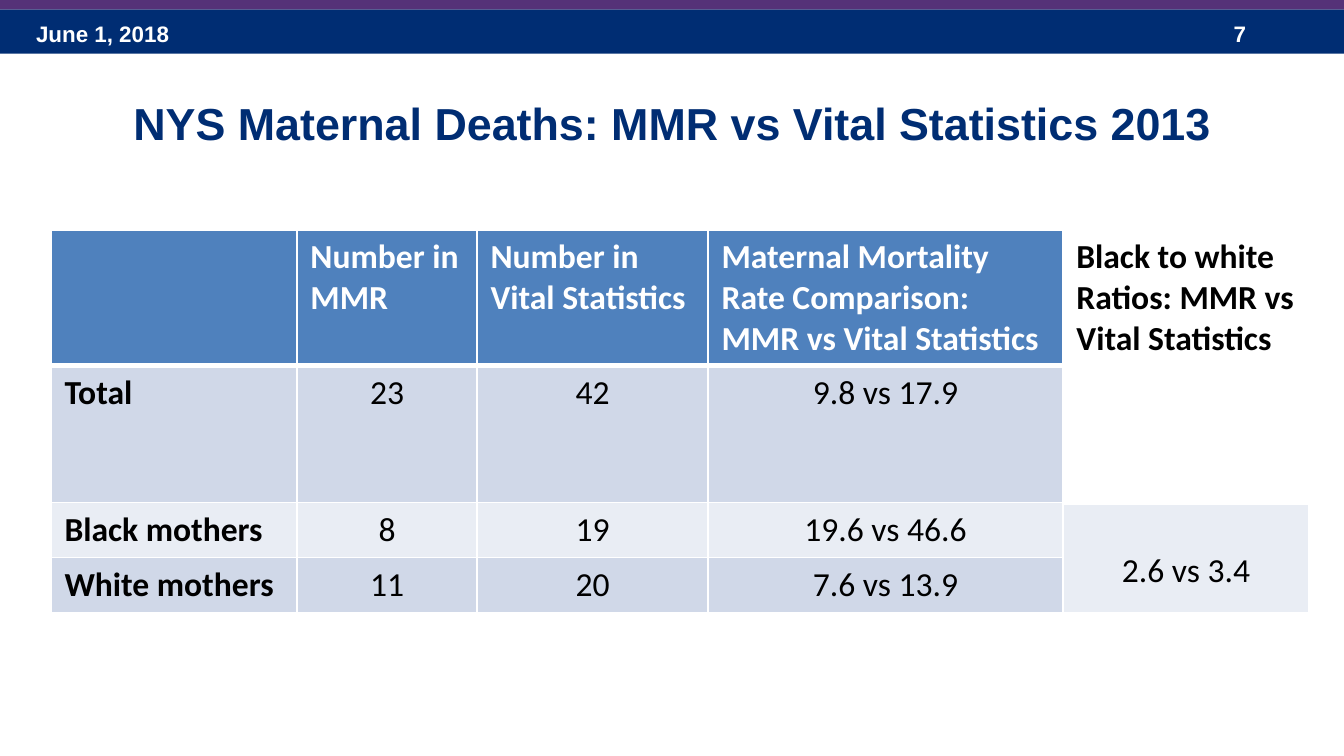
"""Build a slide that compares maternal deaths by source."""
from lxml.etree import SubElement
from pptx import Presentation
from pptx.dml.color import RGBColor
from pptx.enum.shapes import MSO_SHAPE as Shape
from pptx.enum.text import MSO_ANCHOR as Anchor, PP_ALIGN as Align
from pptx.oxml.ns import qn
from pptx.util import Inches, Pt

NAVY = RGBColor(0x00, 0x2D, 0x73)
PURPLE = RGBColor(0x55, 0x32, 0x78)
WHITE = RGBColor(0xFF, 0xFF, 0xFF)
BLACK = RGBColor(0x00, 0x00, 0x00)
BLUE = RGBColor(0x4F, 0x81, 0xBD)
MID = RGBColor(0xD0, 0xD8, 0xE8)
PALE = RGBColor(0xE9, 0xED, 0xF4)

COLS = [1.83, 1.34, 1.72, 2.64, 1.83]
ROWS = [1.01, 1.02, 0.41, 0.41]
FILLS = [BLUE, MID, PALE, MID]
DATA = [
    ["", "Number in MMR", "Number in Vital Statistics",
     "Maternal Mortality Rate Comparison: MMR vs Vital Statistics",
     "Black to white Ratios: MMR vs Vital Statistics"],
    ["Total", "23", "42", "9.8 vs 17.9", ""],
    ["Black mothers", "8", "19", "19.6 vs 46.6", "2.6 vs 3.4"],
    ["White mothers", "11", "20", "7.6 vs 13.9", ""],
]


def put(frame, text, size=18, face="Calibri", color=BLACK, bold=False,
        align=Align.LEFT, lead=None):
    """Write one formatted paragraph into a text frame."""
    frame.word_wrap = True
    para = frame.paragraphs[0]
    para.alignment = align
    para.line_spacing = lead
    run = para.add_run()
    run.text = text
    font = run.font
    font.size, font.name, font.bold = Pt(size), face, bold
    font.color.rgb = color


def add_bar(slide, top, height, color):
    """Add a full-width bar."""
    bar = slide.shapes.add_shape(Shape.RECTANGLE, 0, Inches(top),
                                 Inches(10), Inches(height))
    bar.shadow.inherit = False
    bar.fill.solid()
    bar.fill.fore_color.rgb = color
    bar.line.fill.background()


def add_label(slide, text, left, width):
    """Add a label on the top bar."""
    box = slide.shapes.add_textbox(Inches(left), Inches(0.1),
                                   Inches(width), Inches(0.3))
    put(box.text_frame, text, size=12, face="Arial", color=WHITE, bold=True)


def add_title(slide, text):
    """Place and fill the title."""
    title = slide.shapes.title
    title.left, title.top = Inches(-0.1), Inches(0.44)
    title.width, title.height = Inches(10.2), Inches(0.94)
    title.text_frame.vertical_anchor = Anchor.MIDDLE
    put(title.text_frame, text, size=24, face="Arial", color=NAVY,
        bold=True, align=Align.CENTER)


def set_edges(cell, base):
    """Draw white cell borders with the given bottom width."""
    props = cell._tc.get_or_add_tcPr()
    for tag, width in (("lnL", 1), ("lnR", 1), ("lnT", 1), ("lnB", base)):
        line = SubElement(props, qn(f"a:{tag}"), w=str(Pt(width)))
        fill = SubElement(line, qn("a:solidFill"))
        SubElement(fill, qn("a:srgbClr"), val=str(WHITE))


def fill_cell(cell, text, row, col):
    """Format one cell by its place in the table."""
    head, last = row == 0, col == len(COLS) - 1
    set_edges(cell, 3 if head else 1)
    cell.fill.solid()
    cell.fill.fore_color.rgb = WHITE if last and row < 2 else FILLS[row]
    if text:
        label = head or col == 0
        put(cell.text_frame, text, bold=label,
            color=WHITE if head and not last else BLACK,
            align=Align.LEFT if label else Align.CENTER,
            lead=2.0 if last and not head else None)


def add_grid(slide):
    """Add the table of deaths, rates and ratios."""
    table = slide.shapes.add_table(
        len(ROWS), len(COLS), Inches(0.38), Inches(1.71),
        Inches(sum(COLS)), Inches(sum(ROWS))).table
    table.first_row = table.horz_banding = False
    for col, width in zip(table.columns, COLS):
        col.width = Inches(width)
    for row, height in zip(table.rows, ROWS):
        row.height = Inches(height)
    for top in (0, 2):
        table.cell(top, 4).merge(table.cell(top + 1, 4))
    for row, texts in enumerate(DATA):
        for col, text in enumerate(texts):
            fill_cell(table.cell(row, col), text, row, col)


def main():
    """Build and save the slide."""
    deck = Presentation()
    deck.slide_width = Inches(10)
    deck.slide_height = Inches(10 * 9 / 16)
    slide = deck.slides.add_slide(deck.slide_layouts[5])
    add_bar(slide, 0.07, 0.33, NAVY)
    add_label(slide, "June 1, 2018", 0.17, 2.33)
    add_label(slide, "7", 9.08, 0.75)
    add_bar(slide, -0.02, 0.09, PURPLE)
    add_title(slide, "NYS Maternal Deaths: MMR vs Vital Statistics 2013")
    add_grid(slide)
    deck.save("out.pptx")


if __name__ == "__main__":
    main()
